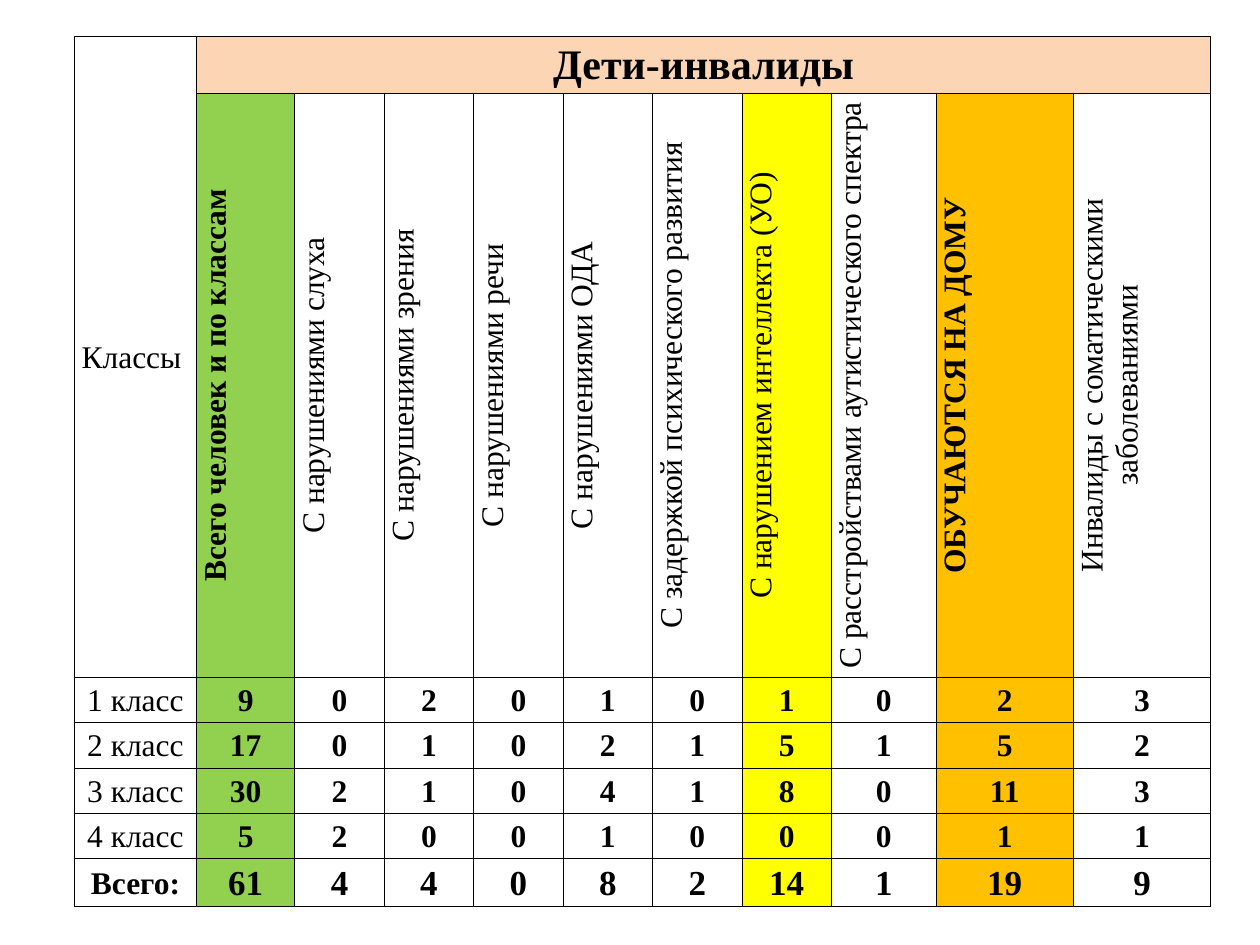
from lxml.etree import SubElement
from pptx import Presentation
from pptx.dml.color import RGBColor
from pptx.enum.text import MSO_ANCHOR, PP_ALIGN
from pptx.oxml.ns import qn
from pptx.util import Inches, Pt

FONT = "Times New Roman"
COLORS = {
    "black": "000000",
    "peach": "FCD5B5",
    "green": "92D050",
    "yellow": "FFFF00",
    "orange": "FFC000",
}
COLUMN_FILLS = {1: "green", 7: "yellow", 9: "orange"}
BOLD_HEADINGS = (1, 9)
COLUMN_WIDTHS = [0.97, 0.78] + [0.71] * 6 + [0.83, 1.09, 1.09]
ROW_HEIGHTS = [0.45, 4.41] + [0.36] * 4 + [0.38]
TABLE_BOX = (0.59, 0.29, sum(COLUMN_WIDTHS), sum(ROW_HEIGHTS))

HEADINGS = [
    "Всего человек и по классам",
    "С нарушениями слуха",
    "С нарушениями зрения",
    "С нарушениями речи",
    "С нарушениями ОДА",
    "С задержкой психического развития",
    "С нарушением интеллекта (УО)",
    "С расстройствами аутистического спектра",
    "ОБУЧАЮТСЯ НА ДОМУ",
    "Инвалиды с соматическими заболеваниями",
]
COUNTS = [
    [9, 0, 2, 0, 1, 0, 1, 0, 2, 3],
    [17, 0, 1, 0, 2, 1, 5, 1, 5, 2],
    [30, 2, 1, 0, 4, 1, 8, 0, 11, 3],
    [5, 2, 0, 0, 1, 0, 0, 0, 1, 1],
]


def add_borders(cell):
    properties = cell._tc.get_or_add_tcPr()
    for index, side in enumerate(("a:lnL", "a:lnR", "a:lnT", "a:lnB")):
        line = SubElement(properties, qn(side), w=str(Pt(0.5)))
        fill = SubElement(line, qn("a:solidFill"))
        SubElement(fill, qn("a:srgbClr"), val=COLORS["black"])
        properties.insert(index, line)


def format_cell(cell, fill=None):
    cell.margin_left = cell.margin_top = cell.margin_right = Inches(0.01)
    cell.margin_bottom = 0
    cell.vertical_anchor = MSO_ANCHOR.MIDDLE
    if fill:
        cell.fill.solid()
        cell.fill.fore_color.rgb = RGBColor.from_string(COLORS[fill])
    else:
        cell.fill.background()
    add_borders(cell)


def write_cell(cell, text, size=18, bold=False, vertical=False):
    cell.text_frame.text = text
    para = cell.text_frame.paragraphs[0]
    para.alignment = PP_ALIGN.CENTER
    font = para.runs[0].font
    font.name = FONT
    font.size = Pt(size)
    font.bold = bold
    font.color.rgb = RGBColor.from_string(COLORS["black"])
    if vertical:
        cell._tc.get_or_add_tcPr().set("vert", "vert270")


def add_class_table(page, box):
    frame = page.shapes.add_table(
        len(ROW_HEIGHTS), len(COLUMN_WIDTHS), *[Inches(length) for length in box]
    )
    table = frame.table
    table.first_row = table.horz_banding = False
    for column, width in zip(table.columns, COLUMN_WIDTHS):
        column.width = Inches(width)
    for row, height in zip(table.rows, ROW_HEIGHTS):
        row.height = Inches(height)

    for r in range(len(ROW_HEIGHTS)):
        for c in range(len(COLUMN_WIDTHS)):
            fill = COLUMN_FILLS.get(c)
            if r == 0:
                fill = "peach" if c else None
            format_cell(table.cell(r, c), fill)

    table.cell(0, 0).merge(table.cell(1, 0))
    table.cell(0, 1).merge(table.cell(0, len(HEADINGS)))
    write_cell(table.cell(0, 0), "Классы ")
    write_cell(table.cell(0, 1), "Дети-инвалиды", size=24, bold=True)
    for c, heading in enumerate(HEADINGS, 1):
        write_cell(table.cell(1, c), heading, bold=c in BOLD_HEADINGS, vertical=True)

    for r, counts in enumerate(COUNTS, 1):
        write_cell(table.cell(r + 1, 0), f"{r} класс")
        for c, count in enumerate(counts, 1):
            write_cell(table.cell(r + 1, c), str(count), bold=True)

    last = len(ROW_HEIGHTS) - 1
    write_cell(table.cell(last, 0), "Всего:", bold=True)
    for c, column in enumerate(zip(*COUNTS), 1):
        write_cell(table.cell(last, c), str(sum(column)), size=20, bold=True)


def main():
    deck = Presentation()
    deck.slide_width, deck.slide_height = Inches(10), Inches(7.5)
    page = deck.slides.add_slide(deck.slide_layouts[6])
    add_class_table(page, TABLE_BOX)
    deck.save("out.pptx")


if __name__ == "__main__":
    main()
